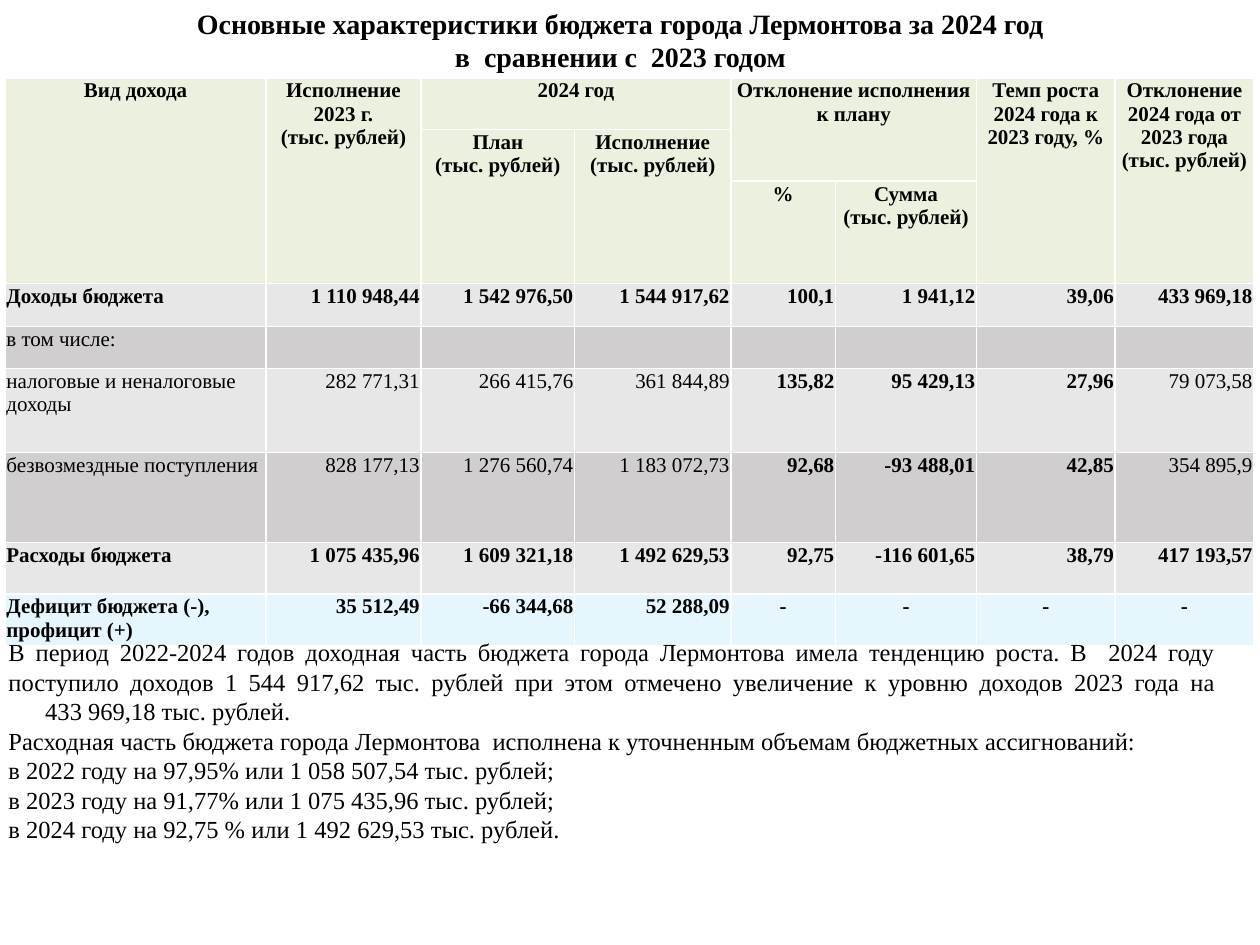
from lxml.etree import SubElement
from pptx import Presentation
from pptx.dml.color import RGBColor
from pptx.enum.text import MSO_ANCHOR, MSO_AUTO_SIZE, PP_ALIGN as Align
from pptx.oxml.ns import qn
from pptx.util import Pt

FONT = "Times New Roman"
HEADER, LIGHT, DARK, BALANCE = "EBF1DE", "E7E7E7", "D0CECE", "00B0F0"
COLUMNS = [149, 88.6, 87.8, 89.3, 59.8, 80.6, 79.2, 79.2]
ROWS = [29.5, 29.5, 58.5, 24.5, 24, 48, 51.5, 29.5, 29.5]

# row, column, rows spanned, columns spanned, text
HEADINGS = [
    (0, 0, 3, 1, "Вид дохода"),
    (0, 1, 3, 1, "Исполнение 2023 г.\n(тыс. рублей)"),
    (0, 2, 1, 2, "2024 год"),
    (0, 4, 2, 2, "Отклонение исполнения к плану"),
    (0, 6, 3, 1, "Темп роста 2024 года к 2023 году, %"),
    (0, 7, 3, 1, "Отклонение 2024 года от 2023 года\n(тыс. рублей)"),
    (1, 2, 2, 1, "План\n(тыс. рублей)"),
    (1, 3, 2, 1, "Исполнение\n(тыс. рублей)"),
    (2, 4, 1, 1, "%"),
    (2, 5, 1, 1, "Сумма\n(тыс. рублей)"),
]
ALL, NONE, MIDDLE = range(8), (), (4, 5, 6)
# fill, bold columns, values
BUDGET = [
    (LIGHT, ALL, ["Доходы бюджета", "1 110 948,44", "1 542 976,50", "1 544 917,62",
                  "100,1", "1 941,12", "39,06", "433 969,18"]),
    (DARK, NONE, ["в том числе:"] + [""] * 7),
    (LIGHT, MIDDLE, ["налоговые и неналоговые доходы", "282 771,31", "266 415,76",
                     "361 844,89", "135,82", "95 429,13", "27,96", "79 073,58"]),
    (DARK, MIDDLE, ["безвозмездные поступления", "828 177,13", "1 276 560,74",
                    "1 183 072,73", "92,68", "-93 488,01", "42,85", "354 895,9"]),
    (LIGHT, ALL, ["Расходы бюджета", "1 075 435,96", "1 609 321,18", "1 492 629,53",
                  "92,75", "-116 601,65", "38,79", "417 193,57"]),
    (BALANCE, ALL, ["Дефицит бюджета (-), профицит (+)", "35 512,49", "-66 344,68",
                    "52 288,09", "-", "-", "-", "-"]),
]
SUMMARY = [
    "В период 2022-2024 годов доходная часть бюджета города Лермонтова имела тенденцию "
    "роста. В  2024 году поступило доходов 1 544 917,62 тыс. рублей при этом отмечено "
    "увеличение к уровню доходов 2023 года на\v\t433 969,18 тыс. рублей.",
    "Расходная часть бюджета города Лермонтова  исполнена к уточненным объемам "
    "бюджетных ассигнований:",
    "в 2022 году на 97,95% или 1 058 507,54 тыс. рублей;",
    "в 2023 году на 91,77% или 1 075 435,96 тыс. рублей;",
    "в 2024 году на 92,75 % или 1 492 629,53 тыс. рублей.",
]


def color(value):
    return RGBColor.from_string(value)


def write(frame, text, size, align, bold=False):
    frame.text = text
    for para in frame.paragraphs:
        para.alignment = align
        for span in para.runs:
            span.font.name, span.font.size, span.font.bold = FONT, Pt(size), bold
            span.font.color.rgb = color("000000")


def style_cell(cell, fill):
    """Set thin margins, white borders and the fill."""
    cell.margin_left = cell.margin_right = cell.margin_top = Pt(0.7)
    cell.margin_bottom = 0
    props = cell._tc.get_or_add_tcPr()
    for side in ("a:lnL", "a:lnR", "a:lnT", "a:lnB"):
        line = SubElement(props, qn(side), w=str(Pt(1)))
        solid = SubElement(line, qn("a:solidFill"))
        SubElement(solid, qn("a:srgbClr"), val="FFFFFF")
    cell.fill.solid()
    cell.fill.fore_color.rgb = color(fill)
    if fill == BALANCE:
        SubElement(props.find(".//" + qn("a:solidFill") + f"/*[@val='{fill}']"),
                   qn("a:alpha"), val="10000")


def add_title(page, left, top, width, height):
    title = page.shapes.title
    title.left, title.top, title.width, title.height = map(Pt, (left, top, width, height))
    frame = title.text_frame
    write(frame, "Основные характеристики бюджета города Лермонтова за 2024 год\n"
          "в  сравнении с  2023 годом", 16, Align.CENTER, True)
    frame.auto_size = MSO_AUTO_SIZE.NONE
    frame.vertical_anchor = MSO_ANCHOR.TOP
    frame.word_wrap = True


def add_budget_table(page, left, top):
    table = page.shapes.add_table(len(ROWS), len(COLUMNS), Pt(left), Pt(top),
                                  Pt(sum(COLUMNS)), Pt(sum(ROWS))).table
    table.first_row = table.horz_banding = False
    for column, width in zip(table.columns, COLUMNS):
        column.width = Pt(width)
    for row, height in zip(table.rows, ROWS):
        row.height = Pt(height)

    first = len(ROWS) - len(BUDGET)
    for row in range(first):
        for column in ALL:
            style_cell(table.cell(row, column), HEADER)
    for row, column, down, across, text in HEADINGS:
        cell = table.cell(row, column)
        if down * across > 1:
            cell.merge(table.cell(row + down - 1, column + across - 1))
        write(cell.text_frame, text, 12, Align.CENTER, True)

    for row, (fill, bold_columns, values) in enumerate(BUDGET, first):
        for column, value in enumerate(values):
            cell = table.cell(row, column)
            style_cell(cell, fill)
            align = Align.LEFT if column == 0 else Align.CENTER if value == "-" else Align.RIGHT
            write(cell.text_frame, value, 12, align, column in bold_columns)


def add_summary(page, left, top, width, height):
    frame = page.shapes.add_textbox(*map(Pt, (left, top, width, height))).text_frame
    frame.word_wrap = True
    write(frame, "\n".join(SUMMARY), 14, Align.JUSTIFY)
    # python-pptx splits only on line feeds here, so the break stays in its paragraph
    props = frame.paragraphs[0]._p.get_or_add_pPr()
    SubElement(SubElement(props, qn("a:tabLst")), qn("a:tab"), pos=str(Pt(21)), algn="l")


def main():
    deck = Presentation()
    deck.slide_width, deck.slide_height = Pt(720), Pt(540)
    page = deck.slides.add_slide(deck.slide_layouts[5])
    add_title(page, 6.5, 0, 696, 46)
    add_budget_table(page, 3, 44.6)
    add_summary(page, -2.2, 360.7, 704, 143.3)
    deck.save("out.pptx")


if __name__ == "__main__":
    main()
